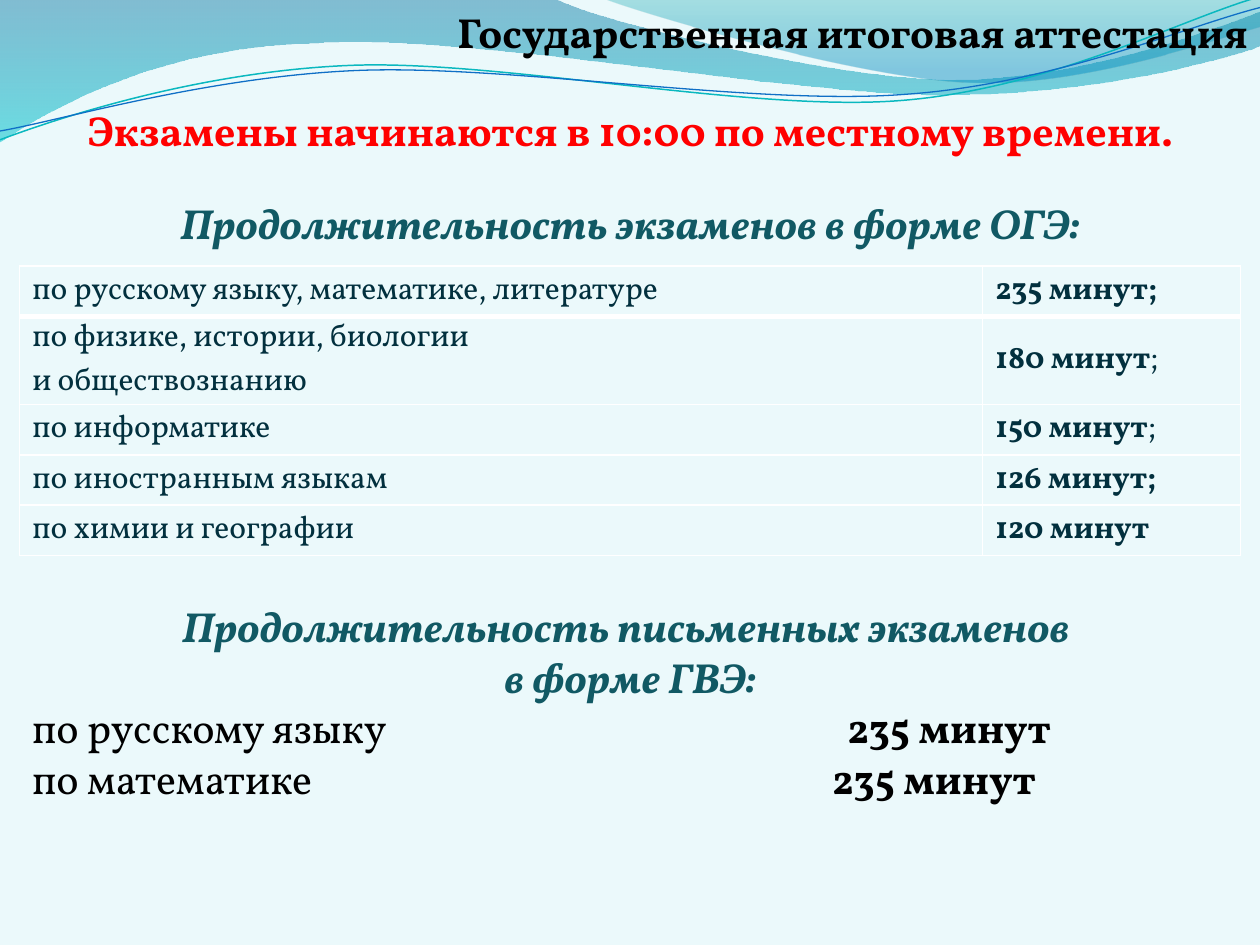
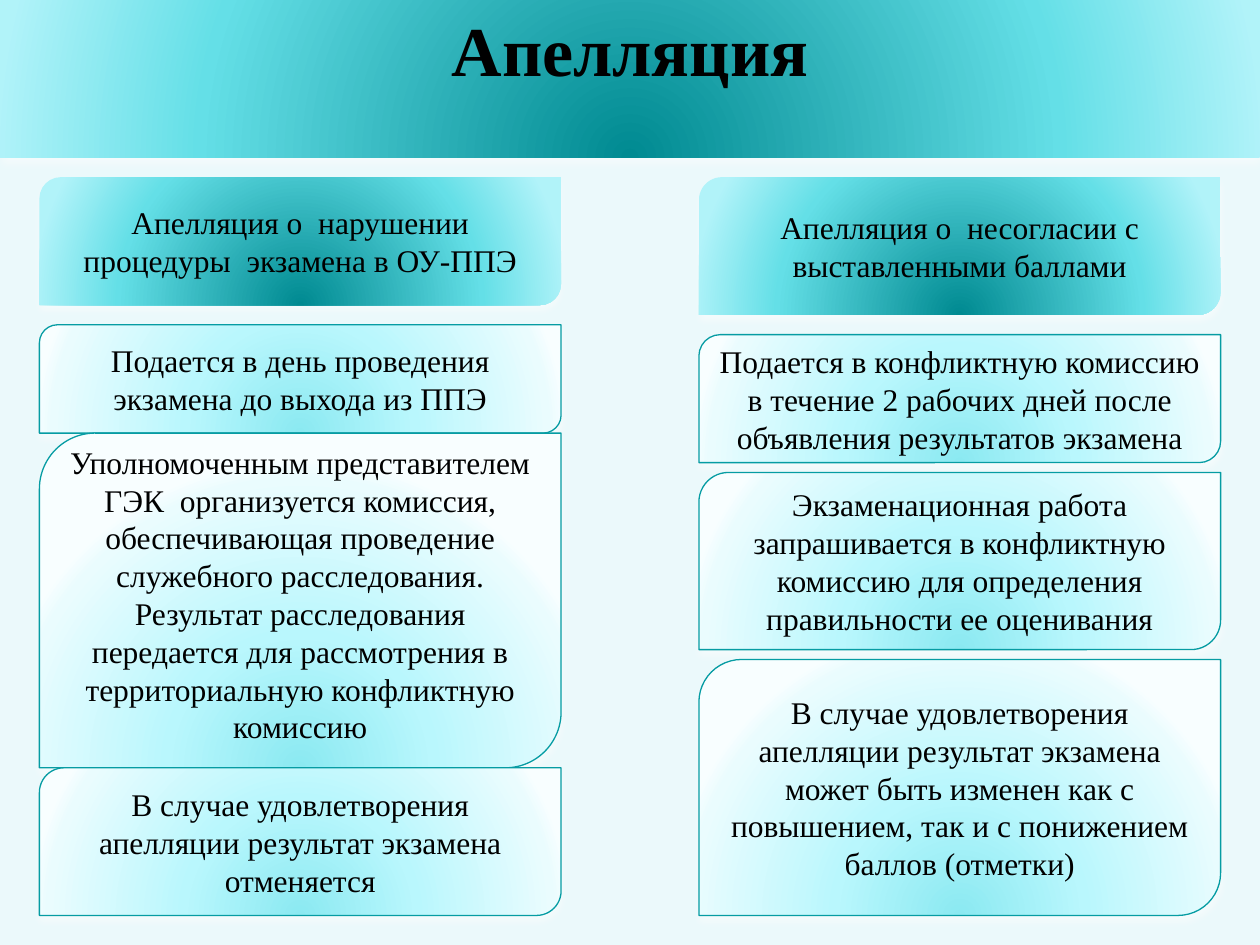
from collections import namedtuple

from lxml import etree
from pptx import Presentation
from pptx import util as u
from pptx.dml.color import RGBColor
from pptx.enum import shapes, text
from pptx.oxml import ns

COLUMNS, ROWS = 64, 48
UNIT = u.Inches(10) / COLUMNS
Box = namedtuple("Box", "left top width height")
SLIDE = Box(0, 0, COLUMNS, ROWS)

BACKGROUND, BLACK, RED, TEAL, NAVY = "EBF9FB", "000000", "FF0000", "115964", "02303E"
WHITE, CARD_LINE = "FFFFFF", "069CA3"
SERIF = dict(name="Times New Roman", size=18, color=BLACK)
VOLLKORN = dict(name="Vollkorn", size=24, bold=True, color=BLACK)
HEADING = {**VOLLKORN, "color": TEAL, "italic": True}
CELL = {**VOLLKORN, "size": 18, "color": NAVY}
CENTER, LEFT, RIGHT, JUSTIFY = (
    getattr(text.PP_ALIGN, name) for name in ("CENTER", "LEFT", "RIGHT", "JUSTIFY"))
TOP, MIDDLE, BOTTOM = (
    getattr(text.MSO_ANCHOR, name) for name in ("TOP", "MIDDLE", "BOTTOM"))

# Gradient stops: position, colour, opacity (all in percent)
DEEP = [(0, "008A91", 100), (68, "64DFE7", 100), (100, "B1F3F9", 100)]
PALE = [(0, "8BE9F1", 100), (43, "B9F7FD", 100), (93, "EAFCFE", 100), (100, "F8FEFF", 100)]

# Wave points are in tenths of the slide's width: 2 numbers for a line, 6 for a curve
WAVE_FILLS = [
    ([(0, 0), (4.4, -0.01), (4.76, 0.17, 6.64, 0.63, 7.58, 0.63),
      (8.53, 0.63, 9.58, 0.26, 10, 0.09), (10.01, 0.36),
      (9.83, 0.44, 8.7, 0.76, 7.46, 0.75), (6.22, 0.75, 3.82, 0.28, 2.57, 0.34),
      (1.29, 0.36, 0.46, 0.83, -0.01, 1.13)],
     [(0, "0074A1", 45), (100, "00C6CF", 55)]),
    ([(4.79, -0.01), (5.09, 0.11, 6.82, 0.62, 7.69, 0.65),
      (8.56, 0.69, 9.61, 0.32, 10, 0.21), (10, 0)],
     [(0, "00A1A9", 30), (80, "008BBF", 45)]),
]
WAVE_LINES = [
    ([(0, 1.11), (0.48, 0.93, 1.58, 0.57, 2.77, 0.52), (3.95, 0.47, 5.93, 0.89, 7.13, 0.8),
      (8.33, 0.71, 9.38, 0.15, 9.98, -0.02)], "0AB8BF", 0.85),
    ([(0, 1.04), (0.47, 0.96, 1.64, 0.61, 2.83, 0.56), (4.03, 0.51, 5.97, 0.84, 7.17, 0.75),
      (8.36, 0.67, 9.41, 0.21, 10, 0.06)], "0F6FC6", 0.75),
]

DURATIONS = [
    (["по русскому языку, математике, литературе"], "235 минут;", ""),
    (["по физике, истории, биологии", "и обществознанию"], "180 минут", ";"),
    (["по информатике"], "150 минут", ";"),
    (["по иностранным языкам"], "126 минут;", ""),
    (["по химии и географии"], "120 минут", ""),
]

# Cards of each column: top row, height in rows, anchor, wording
APPEALS = [
    [(9, 6.5, MIDDLE, "Апелляция о  нарушении процедуры  экзамена в ОУ-ППЭ"),
     (16.5, 5.5, MIDDLE, "Подается в день проведения экзамена до выхода из ППЭ"),
     (22, 17, BOTTOM, "Уполномоченным представителем ГЭК  организуется комиссия, "
      "обеспечивающая проведение служебного расследования. Результат расследования "
      "передается для рассмотрения в территориальную конфликтную комиссию"),
     (39, 7.5, MIDDLE, "В случае удовлетворения апелляции результат экзамена отменяется")],
    [(9, 7, MIDDLE, "Апелляция о  несогласии с выставленными баллами"),
     (17, 6.5, MIDDLE, "Подается в конфликтную комиссию в течение 2 рабочих дней "
      "после объявления результатов экзамена"),
     (24, 9, MIDDLE, "Экзаменационная работа запрашивается в конфликтную комиссию "
      "для определения правильности ее оценивания"),
     (33.5, 13, MIDDLE, "В случае удовлетворения апелляции результат экзамена может быть "
      "изменен как с повышением, так и с понижением баллов (отметки)")],
]


def rgb(value):
    return RGBColor.from_string(value)


def emu(box):
    return [round(length * UNIT) for length in box]


def add_xml(parent, tag, **attributes):
    child = etree.SubElement(parent, ns.qn(tag))
    for name, value in attributes.items():
        child.set(name, str(value))
    return child


def add_color(parent, color, opacity):
    node = add_xml(parent, "a:srgbClr", val=color)
    if opacity < 100:
        add_xml(node, "a:alpha", val=opacity * 1000)


def fill_gradient(shape, stops, radial=False):
    shape.fill.gradient()
    gradient = shape.element.spPr.find(ns.qn("a:gradFill"))
    for child in list(gradient):
        gradient.remove(child)
    stop_list = add_xml(gradient, "a:gsLst")
    for position, color, opacity in stops:
        add_color(add_xml(stop_list, "a:gs", pos=position * 1000), color, opacity)
    if radial:
        circle = add_xml(gradient, "a:path", path="circle")
        add_xml(circle, "a:fillToRect", l=50000, t=130000, r=50000, b=-30000)
    else:
        add_xml(gradient, "a:lin", ang=5400000, scaled=1)


def set_line(shape, color=None, width=0.75):
    if color is None:
        shape.line.fill.background()
    else:
        shape.line.color.rgb = rgb(color)
        shape.line.width = u.Pt(width)


def write(para, pieces, align=LEFT, **spacing):
    """Fill a paragraph with (wording, font format) pieces."""
    para.alignment = align
    for name, value in spacing.items():
        setattr(para, name, value)
    for wording, style in pieces:
        span = para.add_run()
        span.text = wording
        for name, value in style.items():
            if name == "color":
                span.font.color.rgb = rgb(value)
            else:
                setattr(span.font, name, u.Pt(value) if name == "size" else value)


def write_lines(frame, lines):
    for index, (pieces, layout) in enumerate(lines):
        para = frame.add_paragraph() if index else frame.paragraphs[0]
        write(para, pieces, **layout)


def add_text(page, box, lines):
    frame = page.shapes.add_textbox(*emu(box)).text_frame
    frame.word_wrap = True
    write_lines(frame, lines)
    return frame


def bend(outline, segments):
    """Join each three line steps that stand for a curve into one cubic curve."""
    steps = iter(list(outline.element.spPr.iter(ns.qn("a:lnTo"))))
    for segment in segments:
        first = next(steps)
        if len(segment) == 6:
            curve = etree.Element(ns.qn("a:cubicBezTo"))
            first.addprevious(curve)
            for step in (first, next(steps), next(steps)):
                curve.append(step[0])
                step.getparent().remove(step)


def add_outline(page, box, points, close):
    left, top, width, _ = emu(box)
    spots = [(round(left + x * width / 10), round(top + y * width / 10))
             for segment in points for x, y in zip(segment[::2], segment[1::2])]
    builder = page.shapes.build_freeform(*spots[0], scale=1.0)
    builder.add_line_segments(spots[1:], close=close)
    outline = builder.convert_to_shape()
    bend(outline, points[1:])
    outline.shadow.inherit = False
    return outline


def add_waves(page, box):
    for points, stops in WAVE_FILLS:
        wave = add_outline(page, box, points, close=True)
        fill_gradient(wave, stops)
        set_line(wave)
    for points, color, width in WAVE_LINES:
        wave = add_outline(page, box, points, close=False)
        wave.fill.background()
        set_line(wave, color, width)


def add_page(deck):
    page = deck.slides.add_slide(deck.slide_layouts[6])
    page.background.fill.solid()
    page.background.fill.fore_color.rgb = rgb(BACKGROUND)
    add_waves(page, SLIDE)
    return page


def add_card(page, box, preset, stops, line, anchor, wording, style):
    card = page.shapes.add_shape(preset, *emu(box))
    fill_gradient(card, stops, radial=True)
    set_line(card, line)
    card.shadow.inherit = False
    effects = card.element.spPr.find(ns.qn("a:effectLst"))
    glow = add_xml(effects, "a:outerShdw", blurRad=u.Pt(4.5), dist=u.Pt(3),
                   dir=5400000, rotWithShape=0)
    add_color(glow, WHITE, 48)
    card.text_frame.word_wrap = True
    card.text_frame.vertical_anchor = anchor
    write(card.text_frame.paragraphs[0], [(wording, style)], CENTER)


def set_borders(cell, widths):
    properties = cell._tc.get_or_add_tcPr()
    for index, (side, width) in enumerate(zip("LRTB", widths)):
        border = add_xml(properties, f"a:ln{side}", w=u.Pt(width))
        add_color(add_xml(border, "a:solidFill"), WHITE, 100)
        properties.insert(index, border)


def add_durations(page, box):
    table = page.shapes.add_table(len(DURATIONS), 2, *emu(box)).table
    table.first_row = table.horz_banding = False
    first_width = round(box.width * UNIT * 0.789)
    table.columns[0].width = first_width
    table.columns[1].width = round(box.width * UNIT) - first_width
    for index, (subjects, minutes, mark) in enumerate(DURATIONS):
        table.rows[index].height = u.Inches(0.4 if len(subjects) == 1 else 0.7)
        plain = {**CELL, "bold": False}
        names = [[(subject, plain)] for subject in subjects]
        times = [[(minutes, CELL)] + ([(mark, plain)] if mark else [])]
        for cell, paragraphs in zip(table.rows[index].cells, (names, times)):
            cell.fill.background()
            cell.vertical_anchor = MIDDLE
            cell.margin_top = cell.margin_bottom = 0
            write_lines(cell.text_frame, [(pieces, {}) for pieces in paragraphs])
            set_borders(cell, (1, 1, 3 if index == 1 else 1, 3 if index == 0 else 1))


def add_schedule(page, box):
    plain = {**VOLLKORN, "bold": False}
    written = [("по русскому языку", 6.47), ("по математике", 6.35)]
    lines = [
        ([("Экзамены начинаются в 10:00 по местному времени.", {**VOLLKORN, "color": RED})],
         dict(align=CENTER)),
        ([("Продолжительность экзаменов в форме ОГЭ:", HEADING)],
         dict(align=CENTER, space_before=u.Pt(24))),
        ([("Продолжительность письменных экзаменов ", HEADING)],
         dict(align=CENTER, space_before=u.Pt(202))),
        ([("в форме ГВЭ:", HEADING)], dict(align=CENTER)),
    ]
    lines += [([(f"{subject}\t", plain), ("235 минут", VOLLKORN)], dict(align=JUSTIFY))
              for subject, _ in written]
    frame = add_text(page, box, lines)
    for para, (_, stop) in zip(frame.paragraphs[-len(written):], written):
        tabs = add_xml(para._p.get_or_add_pPr(), "a:tabLst")
        add_xml(tabs, "a:tab", pos=u.Inches(stop), algn="l")


def build_exam_times(deck):
    page = add_page(deck)
    add_schedule(page, Box(1, 5, 62, 38.5))
    add_text(page, Box(20.5, 0, 43.5, 3.2),
             [([("Государственная итоговая аттестация", VOLLKORN)], dict(align=RIGHT))])
    add_durations(page, Box(1, 13.5, 62, 14.85))


def build_appeals(deck):
    page = add_page(deck)
    add_card(page, Box(0, 0, COLUMNS, 8), shapes.MSO_SHAPE.RECTANGLE, DEEP, None, TOP,
             "Апелляция", {**SERIF, "size": 40, "bold": True})
    for left, cards in zip((2, 35.5), APPEALS):
        for index, (top, height, anchor, wording) in enumerate(cards):
            stops, line = (PALE, CARD_LINE) if index else (DEEP, None)
            add_card(page, Box(left, top, 26.5, height),
                     shapes.MSO_SHAPE.ROUND_2_DIAG_RECTANGLE, stops, line, anchor,
                     wording, SERIF)


def main():
    deck = Presentation()
    deck.slide_width, deck.slide_height = round(COLUMNS * UNIT), round(ROWS * UNIT)
    build_exam_times(deck)
    build_appeals(deck)
    deck.save("out.pptx")


if __name__ == "__main__":
    main()
